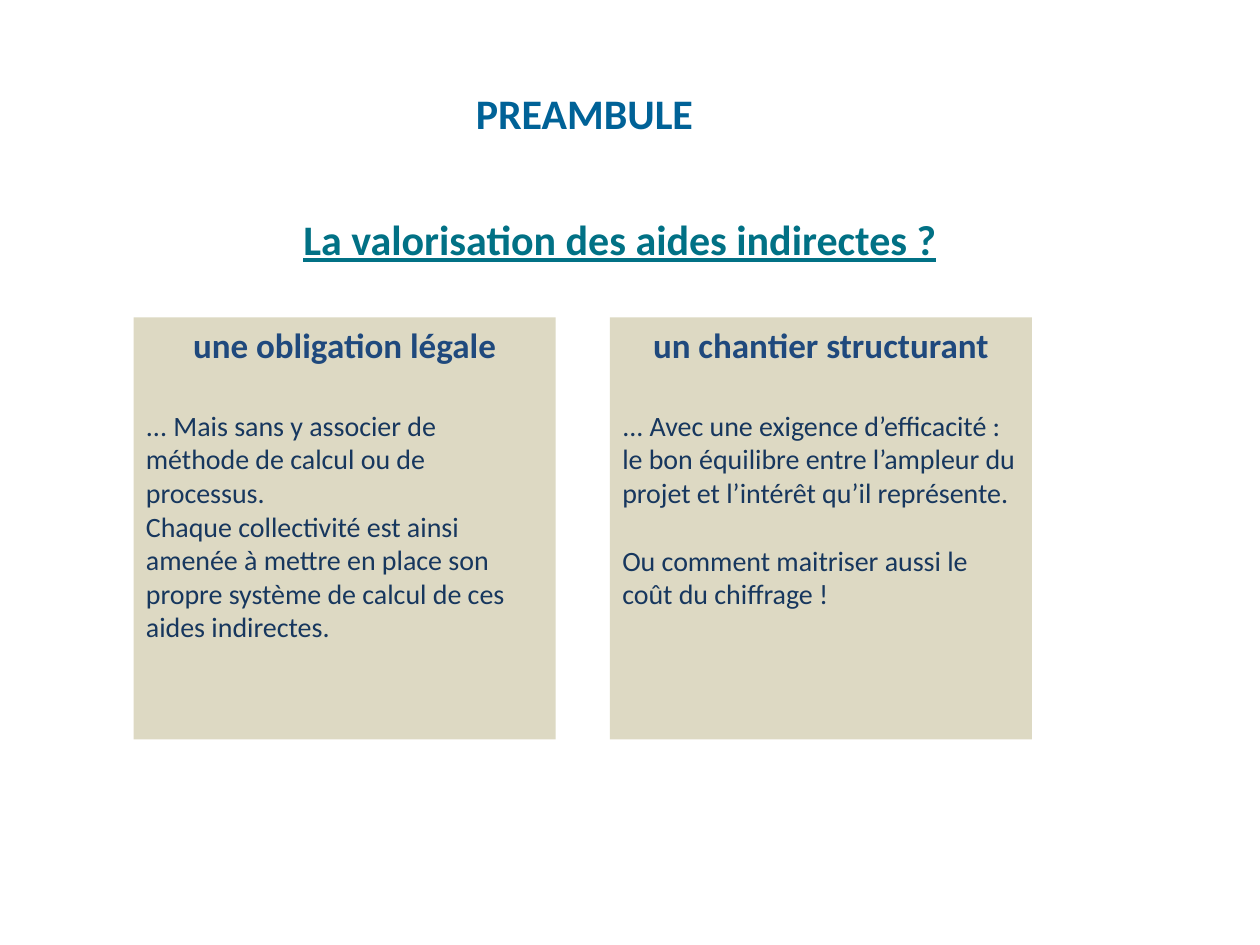
from dataclasses import dataclass

from pptx import Presentation
from pptx.dml.color import RGBColor
from pptx.enum.shapes import MSO_SHAPE as Shape
from pptx.enum.text import MSO_ANCHOR as Anchor, PP_ALIGN as Align
from pptx.util import Pt

COLORS = {
    "title": "006297",
    "question": "017185",
    "card": "DDD9C3",
    "heading": "1F497D",
    "body": "17375E",
}
FORMATS = {
    "title": {"size": Pt(24), "bold": True},
    "question": {"size": Pt(24), "bold": True, "underline": True},
    "heading": {"size": Pt(20), "bold": True},
    "body": {"size": Pt(16), "bold": False},
}
CARD_LEFT, CARD_TOP, CARD_SIDE, CARD_STEP = 76.3, 181.4, 241.2, 272.2
HEADING_GAP, BODY_GAP = 24.4, 19.5


@dataclass
class Card:
    heading: str
    body: list[str]
    body_gap: float = 0


CARDS = [
    Card("une obligation légale", [
        "... Mais sans y associer de méthode de calcul ou de processus.",
        "Chaque collectivité est ainsi amenée à mettre en place son propre "
        "système de calcul de ces aides indirectes.",
    ]),
    Card("un chantier structurant", [
        "... Avec une exigence d’efficacité : le bon équilibre entre l’ampleur "
        "du projet et l’intérêt qu’il représente.",
        "Ou comment maitriser aussi le coût du chiffrage !",
    ], BODY_GAP),
]


def write(paragraph, text: str, role: str, align=Align.LEFT, gap: float = 0) -> None:
    paragraph.alignment = align
    paragraph.space_before = Pt(gap)
    run = paragraph.add_run()
    run.text = text
    run.font.name = "Calibri"
    run.font.color.rgb = RGBColor.from_string(COLORS[role])
    for attribute, value in FORMATS[role].items():
        setattr(run.font, attribute, value)


def fill_headline(box, text: str, role: str) -> None:
    frame = box.text_frame
    frame.word_wrap = True
    frame.vertical_anchor = Anchor.MIDDLE
    write(frame.paragraphs[0], text, role, Align.CENTER)


def draw_card(slide, card: Card, column: int) -> None:
    panel = slide.shapes.add_shape(
        Shape.RECTANGLE, Pt(CARD_LEFT + column * CARD_STEP), Pt(CARD_TOP),
        Pt(CARD_SIDE), Pt(CARD_SIDE))
    panel.shadow.inherit = False
    panel.fill.solid()
    panel.fill.fore_color.rgb = RGBColor.from_string(COLORS["card"])
    panel.line.fill.background()
    frame = panel.text_frame
    frame.word_wrap = True
    frame.vertical_anchor = Anchor.TOP
    write(frame.paragraphs[0], card.heading, "heading", Align.CENTER)
    for index, text in enumerate(card.body):
        gap = card.body_gap if index else HEADING_GAP
        write(frame.add_paragraph(), text, "body", gap=gap)


def main() -> None:
    deck = Presentation()
    deck.slide_width, deck.slide_height = Pt(720), Pt(540)
    slide = deck.slides.add_slide(deck.slide_layouts[5])

    title = slide.shapes.title
    title.left, title.top, title.width, title.height = map(Pt, (28, 44.6, 612, 39.6))
    fill_headline(title, "PREAMBULE", "title")

    question = slide.shapes.add_textbox(*map(Pt, (31, 116.6, 646.6, 39.6)))
    fill_headline(question, "La valorisation des aides indirectes ?", "question")

    for column, card in enumerate(CARDS):
        draw_card(slide, card, column)
    deck.save("out.pptx")


if __name__ == "__main__":
    main()
